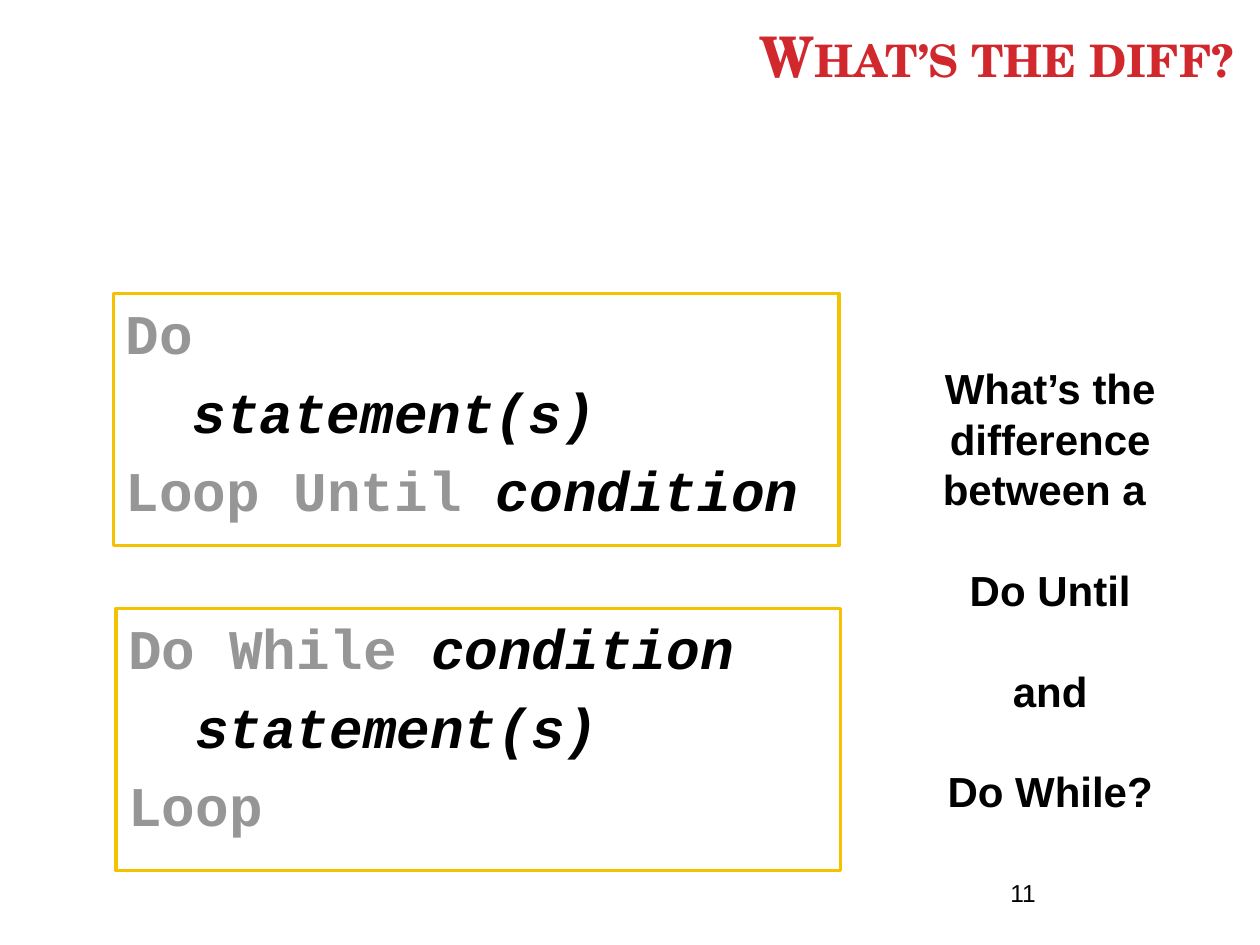
from pptx import Presentation
from pptx.dml.color import RGBColor
from pptx.enum import shapes, text
from pptx.util import Inches, Pt

RED = RGBColor(0xD1, 0x28, 0x2E)
GOLD = RGBColor(0xF5, 0xC2, 0x01)
GRAY = RGBColor(0x96, 0x96, 0x96)
BLACK = RGBColor(0, 0, 0)
WHITE = RGBColor(255, 255, 255)


def style(run, face, size, color, bold=True):
    run.font.name = face
    run.font.size = Pt(size)
    run.font.color.rgb = color
    run.font.bold = bold


def label(slide, left, top, width, height):
    box = slide.shapes.add_textbox(Inches(left), Inches(top), Inches(width), Inches(height))
    box.text_frame.word_wrap = True
    return box.text_frame


deck = Presentation()
deck.slide_width = Inches(10)
deck.slide_height = Inches(7.5)
slide = deck.slides.add_slide(deck.slide_layouts[6])

title = label(slide, 0.17, 0.14, 9.72, 0.61)
title.vertical_anchor = text.MSO_ANCHOR.BOTTOM
title.text = "What’s the diff?"
head = title.paragraphs[0]
head.alignment = text.PP_ALIGN.RIGHT
style(head.runs[0], "TeX Gyre Schola", 32, RED)
head.runs[0].font._element.set("cap", "small")

page = label(slide, 7.92, 6.92, 2.08, 0.5)
page.text = "11"
style(page.paragraphs[0].runs[0], "Arial", 14, BLACK, False)

loops = [
    (0.9, 2.33, 5.76, 2, [("Do", ""), ("", "statement(s)"), ("Loop Until ", "condition")]),
    (0.92, 4.83, 5.75, 2.08, [("Do While ", "condition"), ("", "statement(s)"), ("Loop", "")]),
]
for left, top, width, height, lines in loops:
    box = slide.shapes.add_shape(shapes.MSO_SHAPE.RECTANGLE, Inches(left), Inches(top),
                                 Inches(width), Inches(height))
    box.shadow.inherit = False
    box.fill.solid()
    box.fill.fore_color.rgb = WHITE
    box.line.color.rgb = GOLD
    box.line.width = Pt(2)
    frame = box.text_frame
    frame.word_wrap = True
    frame.vertical_anchor = text.MSO_ANCHOR.TOP
    for i, (key, part) in enumerate(lines):
        para = frame.paragraphs[0] if i == 0 else frame.add_paragraph()
        para.alignment = text.PP_ALIGN.LEFT
        para.line_spacing = Pt(37.8)
        para.space_before = Pt(7)
        if not key:
            para._p.get_or_add_pPr().set("marL", str(Inches(0.53)))
        for word, color, slant in [(key, GRAY, False), (part, BLACK, True)]:
            if word:
                run = para.add_run()
                run.text = word
                style(run, "Courier New", 32, color)
                run.font.italic = slant

ask = label(slide, 7.25, 2.83, 2.17, 3.74)
ask.text = "What’s the difference between a \nDo Until\nand\nDo While?"
for i, para in enumerate(ask.paragraphs):
    para.alignment = text.PP_ALIGN.CENTER
    para.line_spacing = Pt(28.8)
    para.space_before = Pt(28.8 if i else 0)
    style(para.runs[0], "Arial", 24, BLACK)

deck.save("out.pptx")
